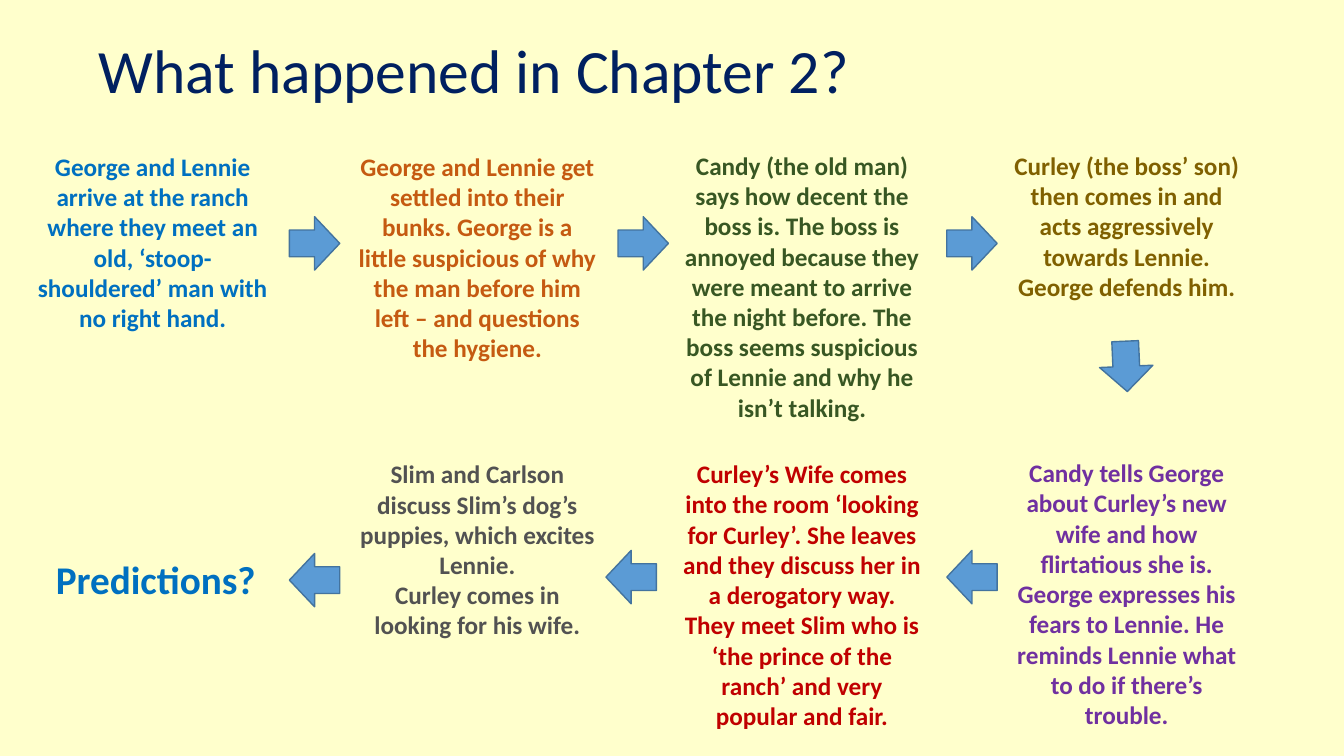
from dataclasses import dataclass

from pptx import Presentation
from pptx.dml.color import RGBColor
from pptx.enum import shapes, text
from pptx.util import Inches, Pt


@dataclass(frozen=True)
class Theme:
    font: str = "Calibri"
    background: str = "FFFFCC"
    title: str = "002060"
    arrow_fill: str = "5B9BD5"
    arrow_line: str = "43739E"
    blue: str = "0070C0"
    orange: str = "C55A11"
    green: str = "385723"
    gold: str = "806000"
    purple: str = "7030A0"
    red: str = "C00000"
    grey: str = "525252"
    title_size: int = 44
    event_size: int = 18
    prompt_size: int = 28


class StoryPage:
    """Holds the theme and the current slide."""

    def __init__(self, deck, theme):
        self.theme = theme
        self.page = deck.slides.add_slide(deck.slide_layouts[5])
        fill = self.page.background.fill
        fill.solid()
        fill.fore_color.rgb = RGBColor.from_string(theme.background)

    def add_span(self, para, words, size, color, bold):
        span = para.add_run()
        span.text = words
        span.font.name = self.theme.font
        span.font.size = Pt(size)
        span.font.bold = bold
        span.font.color.rgb = RGBColor.from_string(color)

    def set_title(self, words):
        box = self.page.shapes.title
        box.left, box.top = Inches(0.88), Inches(0)
        box.width, box.height = Inches(11.5), Inches(1.45)
        frame = box.text_frame
        frame.auto_size = text.MSO_AUTO_SIZE.NONE
        frame.vertical_anchor = text.MSO_ANCHOR.MIDDLE
        para = frame.paragraphs[0]
        para.alignment = text.PP_ALIGN.LEFT
        para.line_spacing = 0.9
        self.add_span(para, words, self.theme.title_size, self.theme.title, False)

    def add_event(self, left, top, height, color, paragraphs, size):
        box = self.page.shapes.add_textbox(
            Inches(left), Inches(top), Inches(2.57), Inches(height))
        frame = box.text_frame
        frame.word_wrap = True
        frame.auto_size = text.MSO_AUTO_SIZE.SHAPE_TO_FIT_TEXT
        for index, words in enumerate(paragraphs):
            para = frame.add_paragraph() if index else frame.paragraphs[0]
            para.alignment = text.PP_ALIGN.CENTER
            self.add_span(para, words, size, color, True)

    def add_arrow(self, left, top, rotation):
        arrow = self.page.shapes.add_shape(
            shapes.MSO_SHAPE.RIGHT_ARROW,
            Inches(left), Inches(top), Inches(0.5), Inches(0.53))
        arrow.rotation = rotation
        arrow.shadow.inherit = False
        arrow.fill.solid()
        arrow.fill.fore_color.rgb = RGBColor.from_string(self.theme.arrow_fill)
        arrow.line.color.rgb = RGBColor.from_string(self.theme.arrow_line)
        arrow.line.width = Pt(1)


def main():
    deck = Presentation()
    deck.slide_width, deck.slide_height = Inches(13.33), Inches(7.5)
    theme = Theme()
    story = StoryPage(deck, theme)
    story.set_title("What happened in Chapter 2?")

    columns = [0.23 + 3.22 * index for index in range(4)]
    events = [
        (columns[0], 1.45, 1.92, theme.blue,
         ["George and Lennie arrive at the ranch where they meet an old, "
          "‘stoop-shouldered’ man with no right hand."]),
        (columns[1], 1.45, 2.22, theme.orange,
         ["George and Lennie get settled into their bunks. George is a little "
          "suspicious of why the man before him left – and questions the hygiene."]),
        (columns[2], 1.44, 2.83, theme.green,
         ["Candy (the old man) says how decent the boss is. The boss is annoyed "
          "because they were meant to arrive the night before. The boss seems "
          "suspicious of Lennie and why he isn’t talking."]),
        (columns[3], 1.44, 1.62, theme.gold,
         ["Curley (the boss’ son) then comes in and acts aggressively towards "
          "Lennie. George defends him."]),
        (columns[3], 4.49, 2.83, theme.purple,
         ["Candy tells George about Curley’s new wife and how flirtatious she is. "
          "George expresses his fears to Lennie. He reminds Lennie what to do if "
          "there’s trouble."]),
        (columns[2], 4.5, 2.83, theme.red,
         ["Curley’s Wife comes into the room ‘looking for Curley’. She leaves and "
          "they discuss her in a derogatory way. They meet Slim who is ‘the prince "
          "of the ranch’ and very popular and fair."]),
        (columns[1], 4.5, 1.92, theme.grey,
         ["Slim and Carlson discuss Slim’s dog’s puppies, which excites Lennie.",
          "Curley comes in looking for his wife."]),
    ]
    for event in events:
        story.add_event(*event, theme.event_size)
    story.add_event(0.26, 5.46, 0.57, theme.blue, ["Predictions?"], theme.prompt_size)

    for index in range(3):
        story.add_arrow(2.87 + 3.26 * index, 2.15, 0)
    story.add_arrow(10.92, 3.37, 87.5)
    for left, top in [(9.39, 5.46), (6.01, 5.46), (2.87, 5.49)]:
        story.add_arrow(left, top, 180)

    deck.save("out.pptx")


if __name__ == "__main__":
    main()
